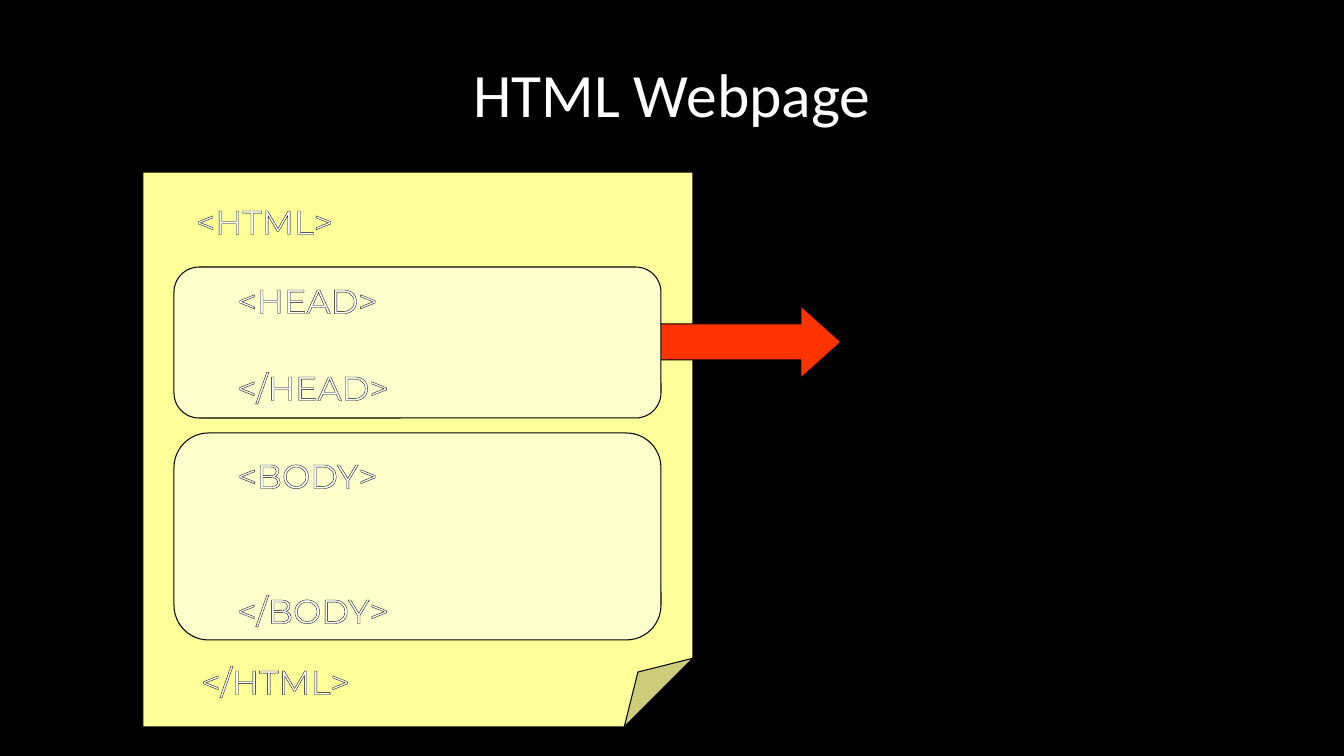
"""Build the HTML Webpage slide: a page with its head and body sections."""
import lxml.etree
import pptx
import pptx.dml.color
import pptx.enum.shapes
import pptx.enum.text
import pptx.oxml
import pptx.oxml.ns
import pptx.util
from dataclasses import dataclass

TITLE = ("HTML Webpage", (67, 30, 1210, 126))
PAGE = (143, 172, 550, 555)
PAGE_FOLD = 12500
PAGE_TAGS = [("<HTML>", 164, 196, 201), ("</HTML>", 165, 656, 221)]
BODY = (174, 433, 487, 207)
BODY_TAGS = [("<BODY>", 207, 450, 201), ("</BODY>", 207, 585, 212)]
ARROW = (630, 306, 211, 72)
HEAD = (174, 267, 487, 151)
HEAD_TAGS = [("<HEAD>", 207, 275, 201), ("</HEAD>", 207, 362, 212)]
SLIDE_SIZE = (1344, 756)
TAG_HEIGHT = 47
EMU_PER_PX = 12192000 / 1344


@dataclass(frozen=True)
class Theme:
    background: str = "000000"
    outline: str = "000000"
    text: str = "FFFFFF"
    page: str = "FFFF99"
    section: str = "FFFFCC"
    arrow: str = "FF3300"
    title_font: str = "Calibri"
    tag_font: str = "Montserrat"
    title_size: int = 44
    tag_size: int = 24
    line_width: float = 0.75


THEME = Theme()
PRESET = pptx.enum.shapes.MSO_SHAPE


def emu(*lengths):
    return [round(length * EMU_PER_PX) for length in lengths]


def rgb(value):
    return pptx.dml.color.RGBColor.from_string(value)


def add_part(slide, preset, box, color, *adjustments):
    part = slide.shapes.add_shape(preset, *emu(*box))
    part.shadow.inherit = False
    part.fill.solid()
    part.fill.fore_color.rgb = rgb(color)
    part.line.color.rgb = rgb(THEME.outline)
    part.line.width = pptx.util.Pt(THEME.line_width)
    for index, value in enumerate(adjustments):
        part.adjustments[index] = value
    return part


def add_page(slide):
    page = add_part(slide, PRESET.FOLDED_CORNER, PAGE, THEME.page)
    qn = pptx.oxml.ns.qn
    guides = next(page._element.iter(qn("a:avLst")))
    lxml.etree.SubElement(guides, qn("a:gd"), name="adj", fmla=f"val {PAGE_FOLD}")


def add_label(slide, words, box, font, size, wrap=False):
    frame = slide.shapes.add_textbox(*emu(*box)).text_frame
    frame.word_wrap = wrap
    paragraph = frame.paragraphs[0]
    paragraph.alignment = pptx.enum.text.PP_ALIGN.CENTER
    run = paragraph.add_run()
    run.text = words
    run.font.name = font
    run.font.size = pptx.util.Pt(size)
    run.font.color.rgb = rgb(THEME.text)
    return frame, run


def add_tags(slide, tags):
    for words, left, top, width in tags:
        box = (left, top, width, TAG_HEIGHT)
        _, run = add_label(slide, words, box, THEME.tag_font, THEME.tag_size)
        outline = pptx.oxml.parse_xml(
            f'<a:ln {pptx.oxml.ns.nsdecls("a")} w="{pptx.util.Pt(THEME.line_width)}">'
            f'<a:solidFill><a:srgbClr val="{THEME.outline}"/></a:solidFill></a:ln>'
        )
        run.font._element.insert(0, outline)


def main():
    deck = pptx.Presentation()
    deck.slide_width, deck.slide_height = emu(*SLIDE_SIZE)
    slide = deck.slides.add_slide(deck.slide_layouts[6])
    slide.background.fill.solid()
    slide.background.fill.fore_color.rgb = rgb(THEME.background)

    heading, _ = add_label(slide, *TITLE, THEME.title_font, THEME.title_size, wrap=True)
    heading.vertical_anchor = pptx.enum.text.MSO_ANCHOR.MIDDLE

    add_page(slide)
    add_tags(slide, PAGE_TAGS)
    add_part(slide, PRESET.ROUNDED_RECTANGLE, BODY, THEME.section, 0.167)
    add_tags(slide, BODY_TAGS)
    add_part(slide, PRESET.RIGHT_ARROW, ARROW, THEME.arrow, 0.5, 0.556)
    add_part(slide, PRESET.ROUNDED_RECTANGLE, HEAD, THEME.section, 0.167)
    add_tags(slide, HEAD_TAGS)
    deck.save("out.pptx")


if __name__ == "__main__":
    main()
